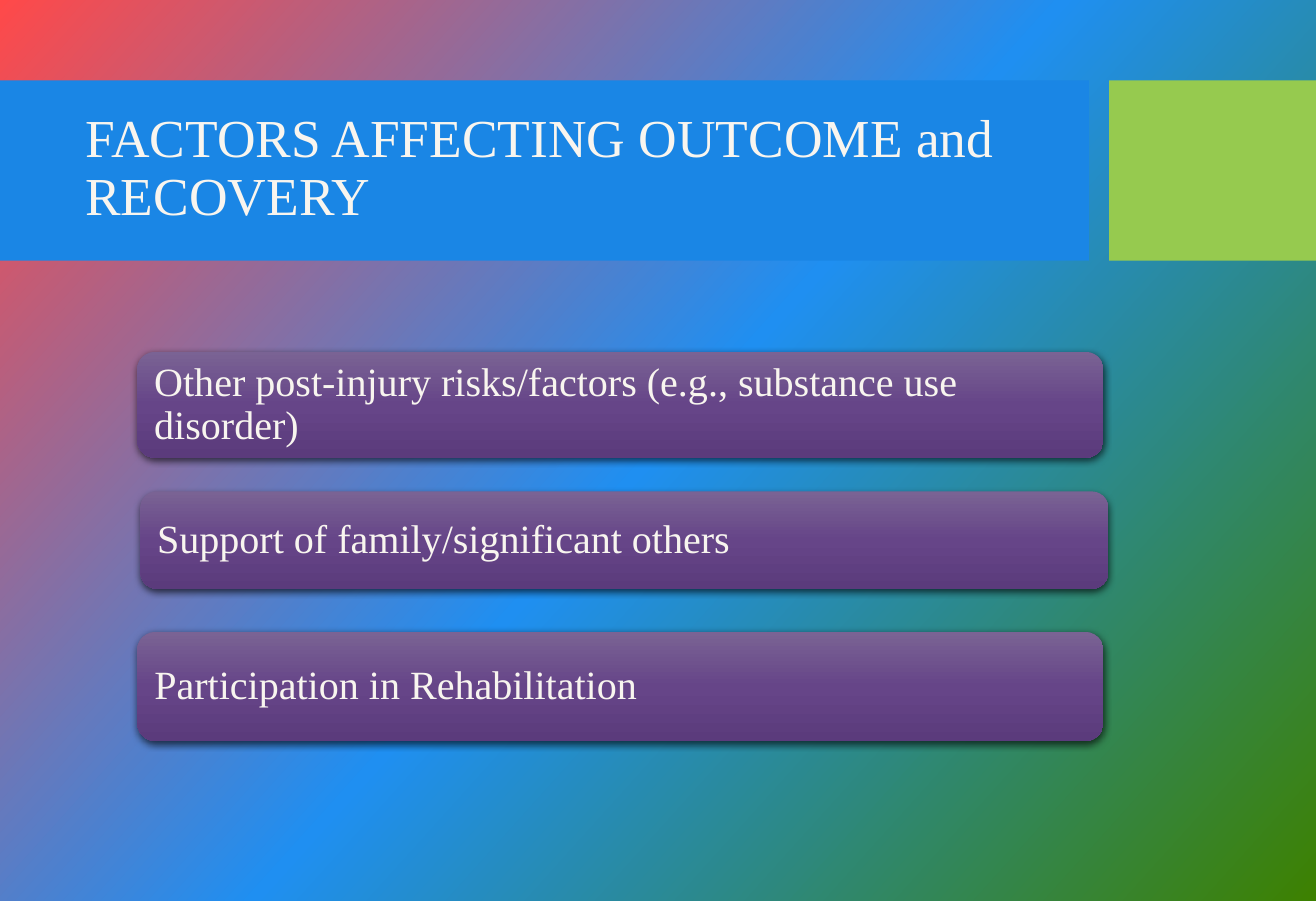
from copy import deepcopy

from lxml.etree import SubElement
from pptx import Presentation
from pptx.dml.color import RGBColor
from pptx.enum.shapes import MSO_SHAPE
from pptx.enum.text import MSO_ANCHOR, PP_ALIGN
from pptx.oxml.ns import qn
from pptx.util import Cm, Pt


def color(value):
    """Turn a hex string into a colour."""
    return RGBColor.from_string(value)


class SlideBuilder:
    """Holds the style and the current slide."""

    font_name = "Times New Roman"
    text_color = "F8F5EF"
    bar_gradient = ("7A6394", "664588", "5B3B7C")
    inset = Cm(0.25)

    def __init__(self, slide):
        """Keep the slide to build on."""
        self.slide = slide

    def gradient(self, fill, element, colors, clockwise_angle):
        """Give a fill an evenly spaced three-colour gradient."""
        fill.gradient()
        fill.gradient_angle = 360 - clockwise_angle
        stop_list = element.xpath(".//a:gsLst")[0]
        stop_list.append(deepcopy(stop_list[0]))
        for index, (stop, value) in enumerate(zip(fill.gradient_stops, colors)):
            stop.color.rgb = color(value)
            stop.position = index / 2

    def background(self, colors, clockwise_angle):
        """Paint the slide background."""
        fill = self.slide.background.fill
        self.gradient(fill, self.slide.element, colors, clockwise_angle)

    def shape(self, kind, left, top, width, height):
        """Add a plain shape without line or shadow."""
        shape = self.slide.shapes.add_shape(
            kind, Cm(left), Cm(top), Cm(width), Cm(height))
        shape.shadow.inherit = False
        shape.line.fill.background()
        return shape

    def band(self, left, width, fill_color):
        """Add one flat part of the title band."""
        shape = self.shape(MSO_SHAPE.RECTANGLE, left, 1.7, width, 3.81)
        shape.fill.solid()
        shape.fill.fore_color.rgb = color(fill_color)

    def set_text(self, shape, text, size):
        """Set left-aligned, vertically centred text in a shape."""
        frame = shape.text_frame
        frame.text = text
        frame.word_wrap = True
        frame.vertical_anchor = MSO_ANCHOR.MIDDLE
        paragraph = frame.paragraphs[0]
        paragraph.alignment = PP_ALIGN.LEFT
        paragraph.line_spacing = 0.9
        font = paragraph.runs[0].font
        font.name = self.font_name
        font.size = Pt(size)
        font.color.rgb = color(self.text_color)

    def title(self, text):
        """Place the title in front of the band."""
        title = self.slide.shapes.title
        title.left, title.top = Cm(1.55), Cm(2.08)
        title.width, title.height = Cm(21.92), Cm(3)
        self.set_text(title, text, 32)
        title.element.getparent().append(title.element)

    def add_shadow(self, shape):
        """Add a soft shadow below a shape."""
        effects = shape.element.spPr.find(qn("a:effectLst"))
        shadow = SubElement(effects, qn("a:outerShdw"), blurRad=str(Pt(4.5)),
                            dist=str(Pt(1.5)), dir="5400000", rotWithShape="0")
        black = SubElement(shadow, qn("a:srgbClr"), val="000000")
        SubElement(black, qn("a:alpha"), val="63000")

    def bar(self, text, left, top, width, height):
        """Add one rounded factor bar."""
        shape = self.shape(MSO_SHAPE.ROUNDED_RECTANGLE, left, top, width, height)
        self.gradient(shape.fill, shape.element, self.bar_gradient, 90)
        self.add_shadow(shape)
        self.set_text(shape, text, 24)
        frame = shape.text_frame
        frame.margin_left = frame.margin_right = self.inset
        frame.margin_top = frame.margin_bottom = self.inset


def main():
    """Build and save the slide."""
    presentation = Presentation()
    presentation.slide_width, presentation.slide_height = Cm(27.81), Cm(19.05)
    title_only = presentation.slide_layouts[5]
    builder = SlideBuilder(presentation.slides.add_slide(title_only))

    builder.background(("FF4949", "1F8FF1", "3D8100"), 42)
    builder.band(0, 23.01, "1A86E5")
    builder.band(23.44, 4.37, "96CA4F")
    builder.title("FACTORS AFFECTING OUTCOME and RECOVERY")

    factors = (
        ("Other post-injury risks/factors (e.g., substance use disorder)",
         2.9, 7.44, 20.42, 2.24),
        ("Support of family/significant others", 2.97, 10.39, 20.45, 2.06),
        ("Participation in Rehabilitation", 2.9, 13.36, 20.42, 2.31),
    )
    for factor in factors:
        builder.bar(*factor)

    presentation.save("out.pptx")


if __name__ == "__main__":
    main()
